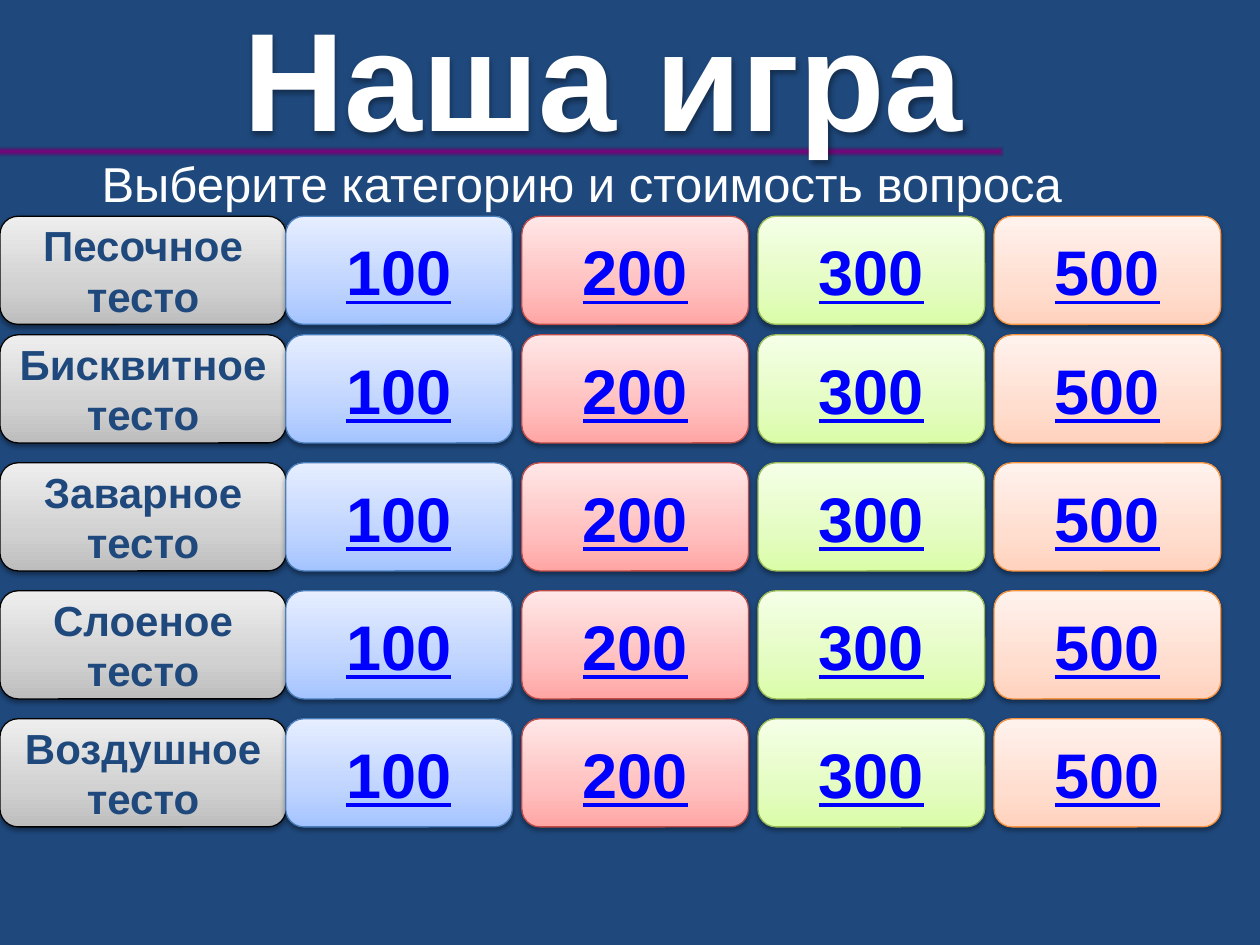
from pptx import Presentation
from pptx.dml.color import RGBColor
from pptx.enum.shapes import MSO_SHAPE
from pptx.enum.text import MSO_ANCHOR, PP_ALIGN
from pptx.oxml import parse_xml
from pptx.oxml.ns import nsdecls, qn
from pptx.util import Cm, Pt

COLORS = {
    "background": "1F497D",
    "title": "FFFFFF",
    "category": "1F497D",
    "value": "0000FF",
    "bar": "800080",
    "bar_edge": "5C005C",
    "shadow": "000000",
}
GRAY = ("BDBDBD", "D1D1D1", "EEEEEE", "000000")
BLUE = ("A4C4FF", "BFD4FF", "E6EEFF", "4B7EBC")
RED = ("FFA6A5", "FFC0BF", "FFE7E7", "BF4C48")
GREEN = ("DAFDA7", "E4FCC2", "F5FFE7", "98B955")
ORANGE = ("FFD2BD", "FFDED0", "FFF2ED", "F69240")

CATEGORIES = ["Песочное тесто", "Бисквитное тесто", "Заварное тесто",
              "Слоеное тесто", "Воздушное тесто"]
VALUES = [("100", BLUE), ("200", RED), ("300", GREEN), ("500", ORANGE)]
ROW_TOPS = [4.36] + [6.75 + 2.58 * i for i in range(4)]


def style_shape(sp, stops="", direction="", shadow=True):
    sp.shadow.inherit = False
    spPr = sp._element.spPr
    if stops:
        sp.fill.background()
        spPr.replace(spPr.find(qn("a:noFill")), parse_xml(
            f'<a:gradFill {nsdecls("a")} rotWithShape="1">'
            f'<a:gsLst>{stops}</a:gsLst>{direction}</a:gradFill>'))
    if shadow:
        spPr.find(qn("a:effectLst")).append(parse_xml(
            f'<a:outerShdw {nsdecls("a")} blurRad="40000" dist="20000" '
            f'dir="5400000" rotWithShape="0"><a:srgbClr val="{COLORS["shadow"]}">'
            '<a:alpha val="38000"/></a:srgbClr></a:outerShdw>'))


def add_text(sp, text, size, color, bold=True, underline=None, align=PP_ALIGN.CENTER):
    tf = sp.text_frame
    tf.word_wrap = True
    tf.vertical_anchor = MSO_ANCHOR.MIDDLE
    p = tf.paragraphs[0]
    p.alignment = align
    r = p.add_run()
    r.text = text
    r.font.name = "Arial"
    r.font.size = Pt(size)
    r.font.bold = bold
    r.font.underline = underline
    r.font.color.rgb = RGBColor.from_string(COLORS[color])


prs = Presentation()
prs.slide_width, prs.slide_height = Cm(25.4), Cm(19.05)
s = prs.slides.add_slide(prs.slide_layouts[6])
s.background.fill.solid()
s.background.fill.fore_color.rgb = RGBColor.from_string(COLORS["background"])

bar = s.shapes.add_shape(MSO_SHAPE.RECTANGLE, Cm(-0.08), Cm(2.95), Cm(20.32), Cm(0.2))
style_shape(
    bar,
    f'<a:gs pos="0"><a:srgbClr val="{COLORS["bar"]}"/></a:gs>'
    f'<a:gs pos="100000"><a:srgbClr val="{COLORS["bar_edge"]}">'
    '<a:alpha val="0"/></a:srgbClr></a:gs>',
    '<a:path path="shape"><a:fillToRect l="50000" t="50000" r="50000" b="50000"/></a:path>',
    shadow=False)
bar.line.fill.background()

title = s.shapes.add_textbox(Cm(1.27), Cm(0.46), Cm(21.79), Cm(2.13))
style_shape(title)
add_text(title, "Наша игра", 80, "title")

for top, category in zip(ROW_TOPS, CATEGORIES):
    cells = [(0, 5.77, category, GRAY, 24, "category", None)]
    for i, (value, palette) in enumerate(VALUES):
        cells.append((5.76 + 4.76 * i, 4.57, value, palette, 36, "value", True))
    for left, width, text, palette, size, color, underline in cells:
        sp = s.shapes.add_shape(MSO_SHAPE.ROUNDED_RECTANGLE,
                                Cm(left), Cm(top), Cm(width), Cm(2.18))
        stops = "".join(f'<a:gs pos="{pos}"><a:srgbClr val="{tone}"/></a:gs>'
                        for pos, tone in zip((0, 35000, 100000), palette))
        style_shape(sp, stops, '<a:lin ang="16200000" scaled="1"/>')
        sp.line.color.rgb = RGBColor.from_string(palette[3])
        sp.line.width = Pt(0.75)
        add_text(sp, text, size, color, underline=underline)

hint = s.shapes.add_textbox(Cm(1.8), Cm(2.97), Cm(22.63), Cm(1.45))
add_text(hint, "Выберите категорию и стоимость вопроса", 28, "title",
         bold=False, align=PP_ALIGN.LEFT)

prs.save("out.pptx")
